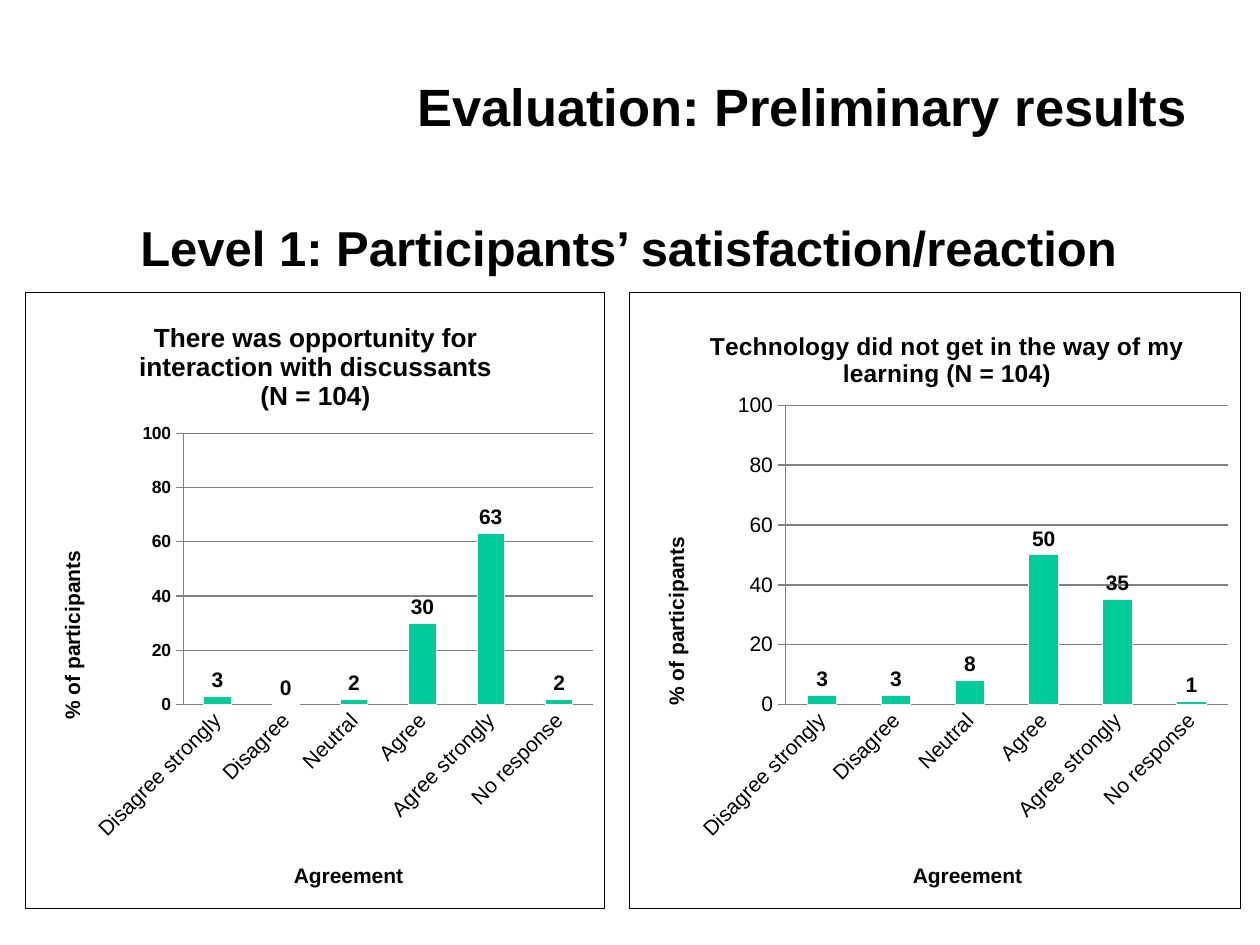
from lxml.etree import SubElement
from pptx import Presentation
from pptx.chart.data import CategoryChartData
from pptx.dml.color import RGBColor
from pptx.enum.chart import XL_CHART_TYPE, XL_LABEL_POSITION, XL_TICK_MARK
from pptx.enum.text import MSO_ANCHOR, PP_ALIGN
from pptx.oxml import parse_xml
from pptx.oxml.ns import nsdecls, qn
from pptx.util import Pt

EMU_PER_PX = 914400 / 126
FONT = "Arial"
BLACK, WHITE, GRAY, GREEN = "000000", "FFFFFF", "808080", "00CC99"
ANSWERS = ["Disagree strongly", "Disagree", "Neutral",
           "Agree", "Agree strongly", "No response"]


def px(length):
    return round(length * EMU_PER_PX)


def color(value):
    return RGBColor.from_string(value)


def style_font(font, size, bold=False):
    font.name = FONT
    font.size = Pt(size)
    font.bold = bold
    font.color.rgb = color(BLACK)


def add_heading(page, frame, text, size):
    box = page.shapes.add_textbox(*map(px, frame))
    text_frame = box.text_frame
    text_frame.word_wrap = True
    text_frame.vertical_anchor = MSO_ANCHOR.MIDDLE
    text_frame.text = text
    para = text_frame.paragraphs[0]
    para.alignment = PP_ALIGN.CENTER
    style_font(para.runs[0].font, size, True)


def set_layout(parent, index, chart_frame, spot, inner=False):
    """Place a chart part at a slide position, as fractions of the chart."""
    for old in parent.findall(qn("c:layout")):
        parent.remove(old)
    left, top, width, height = chart_frame
    values = {"x": (spot[0] - left) / width, "y": (spot[1] - top) / height}
    if inner:
        values.update(w=spot[2] / width, h=spot[3] / height)
    layout = parse_xml(f"<c:layout {nsdecls('c')}><c:manualLayout/></c:layout>")
    manual = layout[0]
    if inner:
        SubElement(manual, qn("c:layoutTarget")).set("val", "inner")
    for mode in ("xMode", "yMode"):
        SubElement(manual, qn(f"c:{mode}")).set("val", "edge")
    for name, value in values.items():
        SubElement(manual, qn(f"c:{name}")).set("val", f"{value:.4f}")
    parent.insert(index, layout)


def add_title(owner, lines, size, chart_frame, spot):
    """Title a chart or an axis, one paragraph per line."""
    title = owner.chart_title if hasattr(owner, "chart_title") else owner.axis_title
    text_frame = title.text_frame
    text_frame.text = "\n".join(lines)
    for para in text_frame.paragraphs:
        for span in para.runs:
            style_font(span.font, size, True)
    set_layout(title._element, 1, chart_frame, spot)


def style_axes(chart, tick_size, tick_bold):
    categories, values = chart.category_axis, chart.value_axis
    categories.major_tick_mark = XL_TICK_MARK.NONE
    style_font(categories.tick_labels.font, 12)
    body = categories._element.find(qn("c:txPr")).find(qn("a:bodyPr"))
    body.set("rot", "-2700000")
    body.set("vert", "horz")

    values.minimum_scale, values.maximum_scale = 0, 100
    values.major_unit = 20
    values.major_tick_mark = XL_TICK_MARK.OUTSIDE
    values.has_major_gridlines = True
    values.tick_labels.number_format = "0"
    values.tick_labels.number_format_is_linked = False
    style_font(values.tick_labels.font, tick_size, tick_bold)
    for part in (categories, values, values.major_gridlines):
        part.format.line.color.rgb = color(GRAY)
        part.format.line.width = Pt(0.75)


def style_bars(plot):
    plot.gap_width = 150
    plot.vary_by_categories = False
    bars = plot.series[0]
    bars.format.fill.solid()
    bars.format.fill.fore_color.rgb = color(GREEN)
    bars.format.line.color.rgb = color(WHITE)
    labels = bars.data_labels
    labels.show_value = True
    labels.number_format = "0"
    labels.number_format_is_linked = False
    labels.position = XL_LABEL_POSITION.OUTSIDE_END
    style_font(labels.font, 12, True)


def add_border(chart):
    border = parse_xml(
        f"<c:spPr {nsdecls('c', 'a')}><a:solidFill><a:srgbClr val='{WHITE}'/></a:solidFill>"
        f"<a:ln w='{Pt(0.75)}'><a:solidFill><a:srgbClr val='{BLACK}'/></a:solidFill></a:ln>"
        "</c:spPr>")
    chart._chartSpace.find(qn("c:chart")).addnext(border)


def add_survey_chart(page, frame, plot_frame, values, title, title_size,
                     title_spot, percent_spot, agreement_spot,
                     tick_size, tick_bold=False):
    data = CategoryChartData(number_format="0")
    data.categories = ANSWERS
    data.add_series("Series 1", values)
    chart = page.shapes.add_chart(
        XL_CHART_TYPE.COLUMN_CLUSTERED, *map(px, frame), data).chart
    chart.has_legend = False
    style_font(chart.font, 12)
    style_axes(chart, tick_size, tick_bold)
    style_bars(chart.plots[0])
    add_title(chart, title, title_size, frame, title_spot)
    add_title(chart.value_axis, ["% of participants"], 12, frame, percent_spot)
    add_title(chart.category_axis, ["Agreement"], 12, frame, agreement_spot)
    rotation = chart.value_axis.axis_title.text_frame._txBody.find(qn("a:bodyPr"))
    rotation.set("rot", "-5400000")
    rotation.set("vert", "horz")
    plot_area = chart._chartSpace.find(qn("c:chart")).find(qn("c:plotArea"))
    set_layout(plot_area, 0, frame, plot_frame, inner=True)
    add_border(chart)


def main():
    deck = Presentation()
    deck.slide_width, deck.slide_height = px(1260), px(945)
    page = deck.slides.add_slide(deck.slide_layouts[6])

    # Headings
    add_heading(page, (388, 32, 829, 147), "Evaluation: Preliminary results", 30)
    add_heading(page, (89, 212, 1079, 69),
                "Level 1: Participants’ satisfaction/reaction", 28)

    # Interaction with discussants
    add_survey_chart(
        page, (25, 292, 580, 617), (183, 433, 411, 272), [3, 0, 2, 30, 63, 2],
        ["There was opportunity for interaction with discussants", "(N = 104)"],
        15, (135, 317), (55, 547), (290, 859), tick_size=10, tick_bold=True)

    # Technology and learning
    add_survey_chart(
        page, (629, 292, 612, 617), (785, 405, 444, 300), [3, 3, 8, 50, 35, 1],
        ["Technology did not get in the way of my learning (N = 104)"],
        14, (705, 325), (659, 533), (909, 859), tick_size=12)

    deck.save("out.pptx")


if __name__ == "__main__":
    main()
